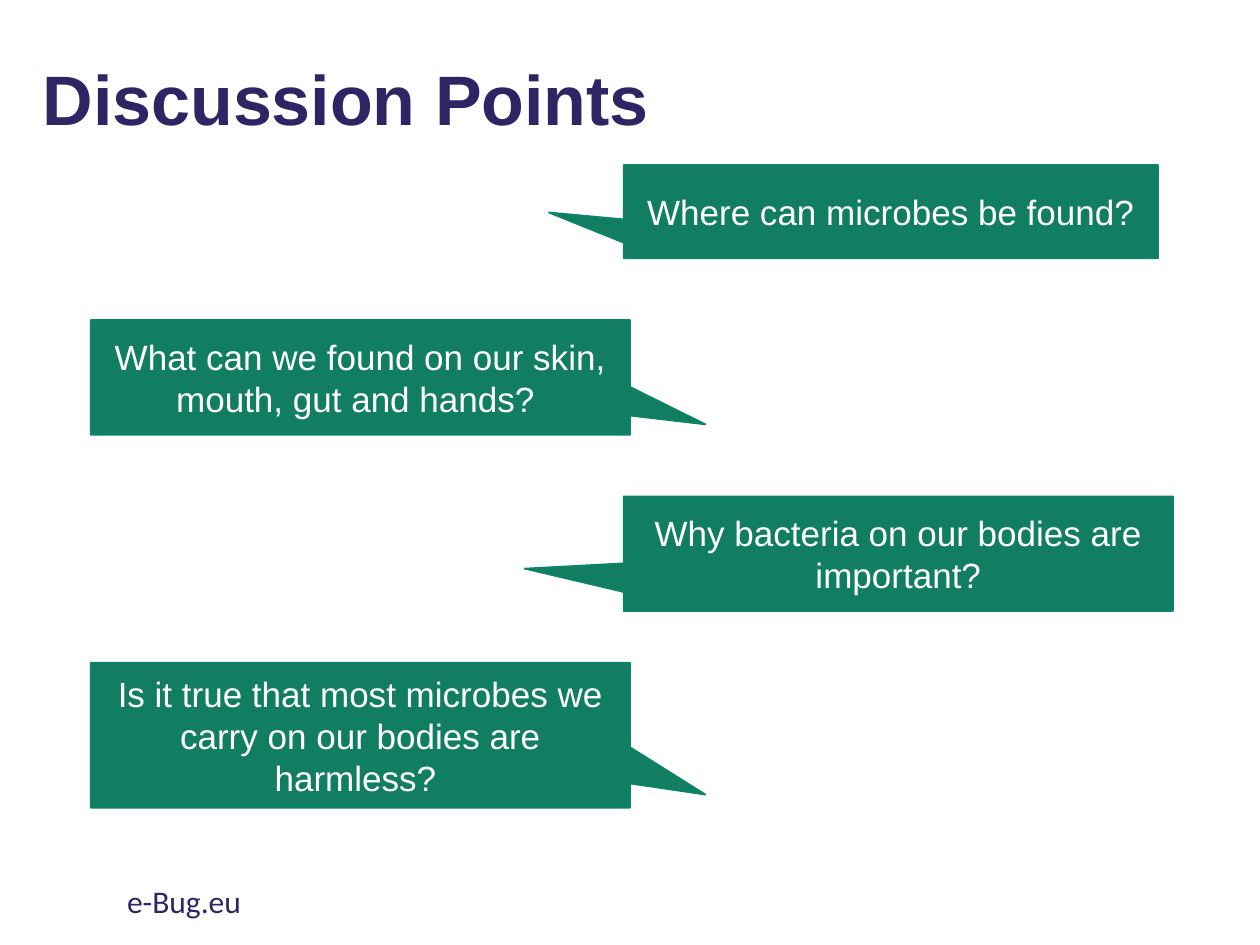
from pptx import Presentation
from pptx.dml.color import RGBColor
from pptx.enum.shapes import MSO_SHAPE
from pptx.enum.text import MSO_ANCHOR, PP_ALIGN
from pptx.util import Inches, Pt

NAVY = RGBColor(0x30, 0x25, 0x64)
GREEN = RGBColor(0x11, 0x7E, 0x62)
GREEN_EDGE = RGBColor(0x0D, 0x84, 0x6A)
WHITE = RGBColor(0xFF, 0xFF, 0xFF)

LEFT_COLUMN, RIGHT_COLUMN = 0.72, 4.95

# Each question: text, box (left, top, width, height), pointer tip
QUESTIONS = [
    ("Where can microbes be found?",
     (RIGHT_COLUMN, 1.31, 4.24, 0.74), (-0.64, 0.01)),
    ("What can we found on our skin, mouth, gut and hands? ",
     (LEFT_COLUMN, 2.54, 4.28, 0.91), (0.64, 0.41)),
    ("Why bacteria on our bodies are important?",
     (RIGHT_COLUMN, 3.94, 4.36, 0.91), (-0.68, 0.13)),
    ("Is it true that most microbes we carry on our bodies are harmless? ",
     (LEFT_COLUMN, 5.26, 4.28, 1.15), (0.64, 0.41)),
]


def write(shape, text, font, size, color, bold=False):
    """Put one run of text in the shape and return its paragraph."""
    shape.text_frame.word_wrap = True
    para = shape.text_frame.paragraphs[0]
    span = para.add_run()
    span.text = text
    span.font.name = font
    span.font.size = Pt(size)
    span.font.bold = bold
    span.font.color.rgb = color
    return para


def add_title(page, box, text):
    title = page.shapes.add_textbox(*map(Inches, box))
    title.text_frame.vertical_anchor = MSO_ANCHOR.MIDDLE
    para = write(title, text, "Arial", 40, NAVY, bold=True)
    para.line_spacing = 0.9


def add_footer(page, box, text):
    footer = page.shapes.add_textbox(*map(Inches, box))
    write(footer, text, "Calibri", 18, NAVY)


def add_question(page, box, text, tip):
    callout = page.shapes.add_shape(
        MSO_SHAPE.RECTANGULAR_CALLOUT, *map(Inches, box))
    callout.adjustments[0], callout.adjustments[1] = tip
    callout.shadow.inherit = False
    callout.fill.solid()
    callout.fill.fore_color.rgb = GREEN
    callout.line.color.rgb = GREEN_EDGE
    callout.line.width = Pt(1)
    callout.text_frame.vertical_anchor = MSO_ANCHOR.MIDDLE
    para = write(callout, text, "Arial", 20, WHITE)
    para.alignment = PP_ALIGN.CENTER


def main():
    deck = Presentation()
    deck.slide_width, deck.slide_height = Inches(10), Inches(7.5)
    page = deck.slides.add_slide(deck.slide_layouts[6])

    # Heading and footer
    add_title(page, (0.24, 0.09, 8.62, 1.45), "Discussion Points")
    add_footer(page, (0.91, 6.95, 3.38, 0.4), "e-Bug.eu")

    # Questions, alternating right and left
    for text, box, tip in QUESTIONS:
        add_question(page, box, text, tip)

    deck.save("out.pptx")


if __name__ == "__main__":
    main()
